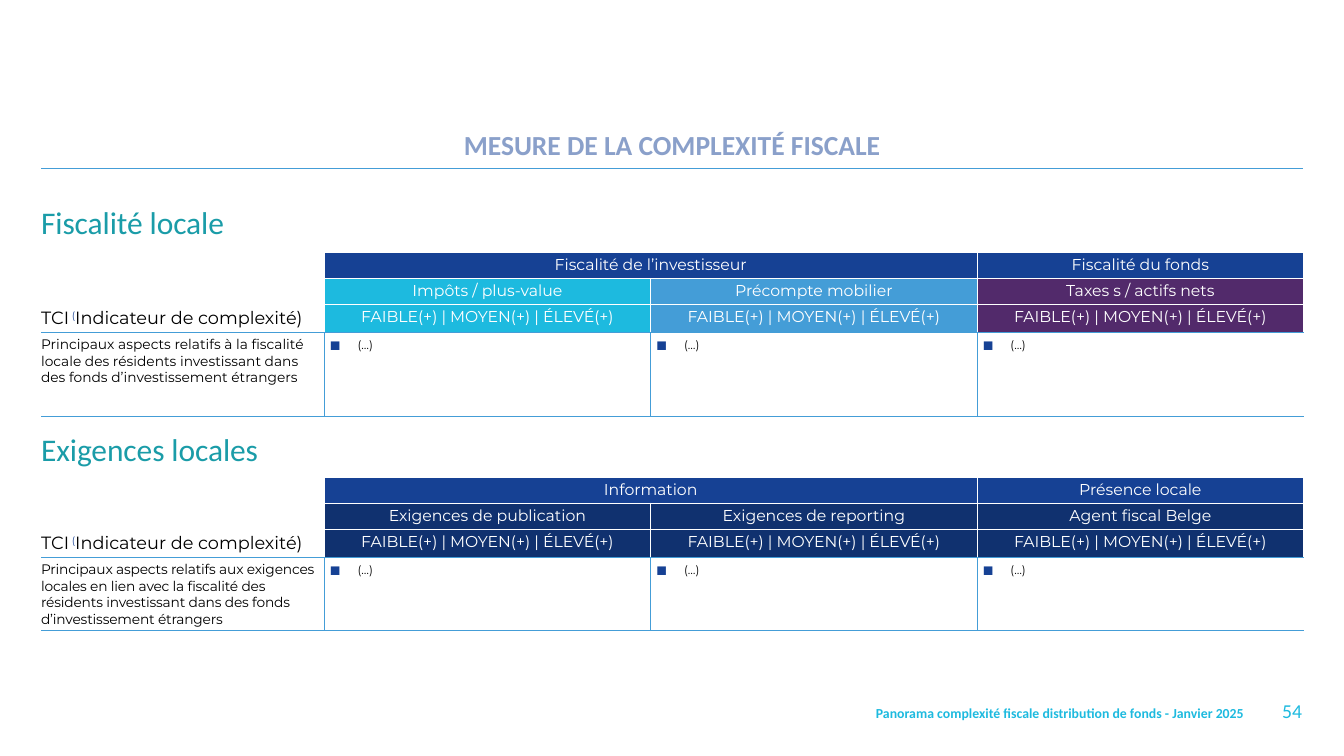
from dataclasses import dataclass

from lxml import etree
from pptx import Presentation
from pptx.dml.color import RGBColor
from pptx.enum import shapes, text
from pptx.oxml import ns
from pptx.util import Pt

PX = 9144
ALIGN = text.PP_ALIGN
ANCHOR = text.MSO_ANCHOR
COLUMNS = (400, 461, 461, 461)
RATING = "FAIBLE(+) | MOYEN(+) | ÉLEVÉ(+)"


@dataclass(frozen=True)
class Theme:
    """Colours, fonts and type sizes of the slide."""
    white: str = "FFFFFF"
    black: str = "000000"
    navy: str = "10316F"
    royal: str = "164194"
    blue: str = "449DD7"
    cyan: str = "1DBADF"
    purple: str = "522A6B"
    teal: str = "1A9CA8"
    lavender: str = "8AA0CA"
    display: str = "Calibri"
    body: str = "Montserrat"
    bullet: str = "Arial"
    section_size: int = 32
    title_size: int = 28
    number_size: int = 20
    indicator_size: int = 18
    header_size: int = 16
    small_size: int = 14
    bullet_size: int = 12


THEME = Theme()


@dataclass(frozen=True)
class Section:
    """One titled block of the table."""
    title: str
    padding: tuple
    groups: tuple
    topics: tuple
    fills: tuple
    aspects: str
    spacing: int
    indicator_edge: str
    heights: tuple


SECTIONS = (
    Section("Fiscalité locale", (0, 12, 0, 12),
            ("Fiscalité de l’investisseur", "Fiscalité du fonds"),
            ("Impôts / plus-value", "Précompte mobilier", "Taxes s / actifs nets"),
            (THEME.cyan, THEME.blue, THEME.purple),
            "Principaux aspects relatifs à la fiscalité locale des résidents "
            "investissant dans des fonds d’investissement étrangers",
            0, THEME.white, (81, 32, 32, 32, 118)),
    Section("Exigences locales", (0, 20, 0, 8),
            ("Information", "Présence locale"),
            ("Exigences de publication", "Exigences de reporting", "Agent fiscal Belge"),
            (THEME.navy,) * 3,
            "Principaux aspects relatifs aux exigences locales en lien avec la fiscalité "
            "des résidents investissant dans des fonds d’investissement étrangers",
            -20, THEME.blue, (86, 32, 32, 32, 80)),
)


def style_span(span, size, colour, font, bold=False):
    """Format one run."""
    span.font.size = Pt(size)
    span.font.name = font
    span.font.bold = bold
    span.font.color.rgb = RGBColor.from_string(colour)


def write(frame, words, size, colour, font, align=ALIGN.LEFT, bold=False):
    """Put a single formatted paragraph in a text frame and return it."""
    frame.text = words
    para = frame.paragraphs[0]
    para.alignment = align
    style_span(para.runs[0], size, colour, font, bold)
    return para


def write_cell(cell, words, size, colour, align=ALIGN.LEFT):
    """Write a paragraph of body type in a cell and return it."""
    para = write(cell.text_frame, words, size, colour, THEME.body, align)
    para.space_after = Pt(3)
    return para


def track(para, spacing):
    """Set the letter spacing of the first run, in hundredths of a point."""
    para.runs[0].font._element.set("spc", str(spacing))


def place_text(box, bounds, anchor, wrap, *style):
    """Move a text shape, remove its insets and write its line."""
    box.left, box.top, box.width, box.height = (value * PX for value in bounds)
    frame = box.text_frame
    frame.word_wrap = wrap
    frame.auto_size = text.MSO_AUTO_SIZE.SHAPE_TO_FIT_TEXT
    frame.vertical_anchor = anchor
    frame.margin_left = frame.margin_top = frame.margin_right = frame.margin_bottom = 0
    write(frame, *style)


def add_rule(page, left, right, top):
    """Draw the thin line under the title."""
    rule = page.shapes.add_connector(
        shapes.MSO_CONNECTOR.STRAIGHT, left * PX, top * PX, right * PX, top * PX)
    rule.line.color.rgb = RGBColor.from_string(THEME.blue)
    rule.line.width = Pt(0.5)
    etree.SubElement(rule._element.spPr, ns.qn("a:effectLst"))


def dress(cell, borders, fill=None, padding=(0, 0, 0, 0)):
    """Set the borders, in L, R, T, B order, then the fill and insets of a cell."""
    properties = cell._tc.get_or_add_tcPr()
    for side, colour in zip("LRTB", borders):
        line = etree.SubElement(properties, ns.qn(f"a:ln{side}"), w=str(Pt(1)))
        if colour is None:
            etree.SubElement(line, ns.qn("a:noFill"))
        else:
            solid = etree.SubElement(line, ns.qn("a:solidFill"))
            etree.SubElement(solid, ns.qn("a:srgbClr"), val=colour)
    if fill:
        cell.fill.solid()
        cell.fill.fore_color.rgb = RGBColor.from_string(fill)
    else:
        cell.fill.background()
    cell.margin_left, cell.margin_top, cell.margin_right, cell.margin_bottom = (
        value * PX for value in padding)


def fill_header(cell, words, fill, bottom=THEME.white, side=4):
    """Fill a coloured header cell."""
    dress(cell, (THEME.white,) * 3 + (bottom,), fill, (side, 5, side, 5))
    write_cell(cell, words, THEME.header_size, THEME.white, ALIGN.CENTER)


def fill_indicator(cell, edge):
    """Fill the label of the rating row, with its raised bracket."""
    dress(cell, (None, edge, None, THEME.blue), None, (0, 5, 8, 5))
    para = write_cell(cell, "TCI", THEME.indicator_size, THEME.black)
    for words, colour in ((" (", THEME.royal), ("Indicateur de complexité)", THEME.black)):
        span = para.add_run()
        span.text = words
        style_span(span, THEME.indicator_size, colour, THEME.body)
    para.runs[1].font._element.set("baseline", "30000")


def fill_bullet(cell, right):
    """Fill a body cell with its square bullet."""
    dress(cell, (THEME.blue, right, THEME.blue, THEME.blue), None, (8, 8, 0, 8))
    para = write_cell(cell, "(…)", THEME.bullet_size, THEME.black)
    properties = para._p.get_or_add_pPr()
    properties.set("marL", str(39 * PX))
    properties.set("indent", str(-39 * PX))
    colour = etree.SubElement(properties, ns.qn("a:buClr"))
    etree.SubElement(colour, ns.qn("a:srgbClr"), val=THEME.royal)
    etree.SubElement(properties, ns.qn("a:buSzPct"), val="150000")
    etree.SubElement(properties, ns.qn("a:buFont"), typeface=THEME.bullet)
    etree.SubElement(properties, ns.qn("a:buChar"), char="■")


def fill_section(table, first, section):
    """Fill the five rows of one section."""
    heading, group, topic, rating, body = (
        [table.cell(first + row, column) for column in range(4)] for row in range(5))
    top = THEME.blue if first else None
    for cell in heading:
        dress(cell, (None, None, top, None), None, section.padding)
    heading[0].merge(heading[3])
    heading[0].vertical_anchor = ANCHOR.MIDDLE
    track(write(heading[0].text_frame, section.title, THEME.section_size,
                THEME.teal, THEME.display), -10)

    for row in (group, topic):
        dress(row[0], (None, THEME.white, None, None))
    for cell, words in zip((group[1], group[3]), section.groups):
        fill_header(cell, words, THEME.royal)
    dress(group[2], (THEME.white,) * 4, THEME.royal)
    group[1].merge(group[2])

    fill_indicator(rating[0], section.indicator_edge)
    dress(body[0], (None, THEME.blue, THEME.blue, THEME.blue), None, (0, 5, 0, 5))
    track(write_cell(body[0], section.aspects, THEME.small_size, THEME.black), section.spacing)
    for column, (words, fill) in enumerate(zip(section.topics, section.fills), 1):
        fill_header(topic[column], words, fill)
        fill_header(rating[column], RATING, fill, THEME.blue, 8)
        fill_bullet(body[column], THEME.blue if column < 3 else None)


def add_complexity_table(page):
    """Add the table and fill both sections."""
    heights = [height for section in SECTIONS for height in section.heights]
    holder = page.shapes.add_table(len(heights), len(COLUMNS), 58 * PX, 275 * PX,
                                   sum(COLUMNS) * PX, sum(heights) * PX)
    table = holder.table
    table.first_row = table.horz_banding = False
    for column, width in zip(table.columns, COLUMNS):
        column.width = width * PX
    for row, height in zip(table.rows, heights):
        row.height = height * PX
    for index, section in enumerate(SECTIONS):
        fill_section(table, index * 5, section)
    holder.height = 615 * PX


def main():
    """Build the slide and save it."""
    deck = Presentation()
    deck.slide_width, deck.slide_height = 1898 * PX, 1067 * PX
    page = deck.slides.add_slide(deck.slide_layouts[5])
    place_text(page.shapes.title, (58, 181, 1782, 47), ANCHOR.TOP, True,
               "MESURE DE LA COMPLEXITÉ FISCALE", THEME.title_size, THEME.lavender,
               THEME.display, ALIGN.CENTER, True)
    add_rule(page, 58, 1840, 237)
    for bounds, wrap, words, size, bold in (
            ((949, 994, 808, 24), True,
             "Panorama complexité fiscale distribution de fonds - Janvier 2025",
             THEME.small_size, True),
            ((1771, 986, 68, 34), False, "54", THEME.number_size, False)):
        place_text(page.shapes.add_textbox(0, 0, 0, 0), bounds, ANCHOR.MIDDLE, wrap,
                   words, size, THEME.cyan, THEME.display, ALIGN.RIGHT, bold)
    add_complexity_table(page)
    deck.save("out.pptx")


if __name__ == "__main__":
    main()
